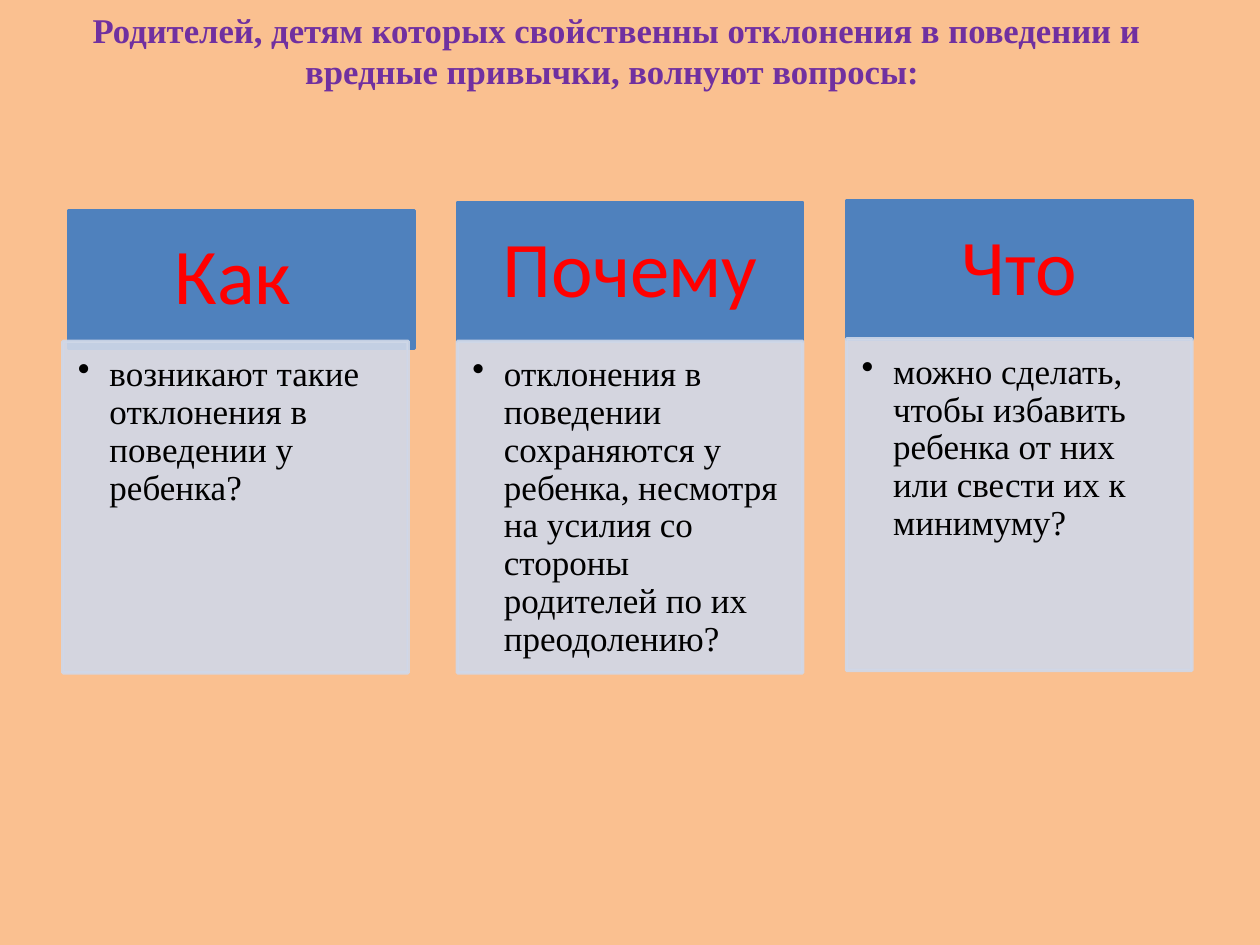
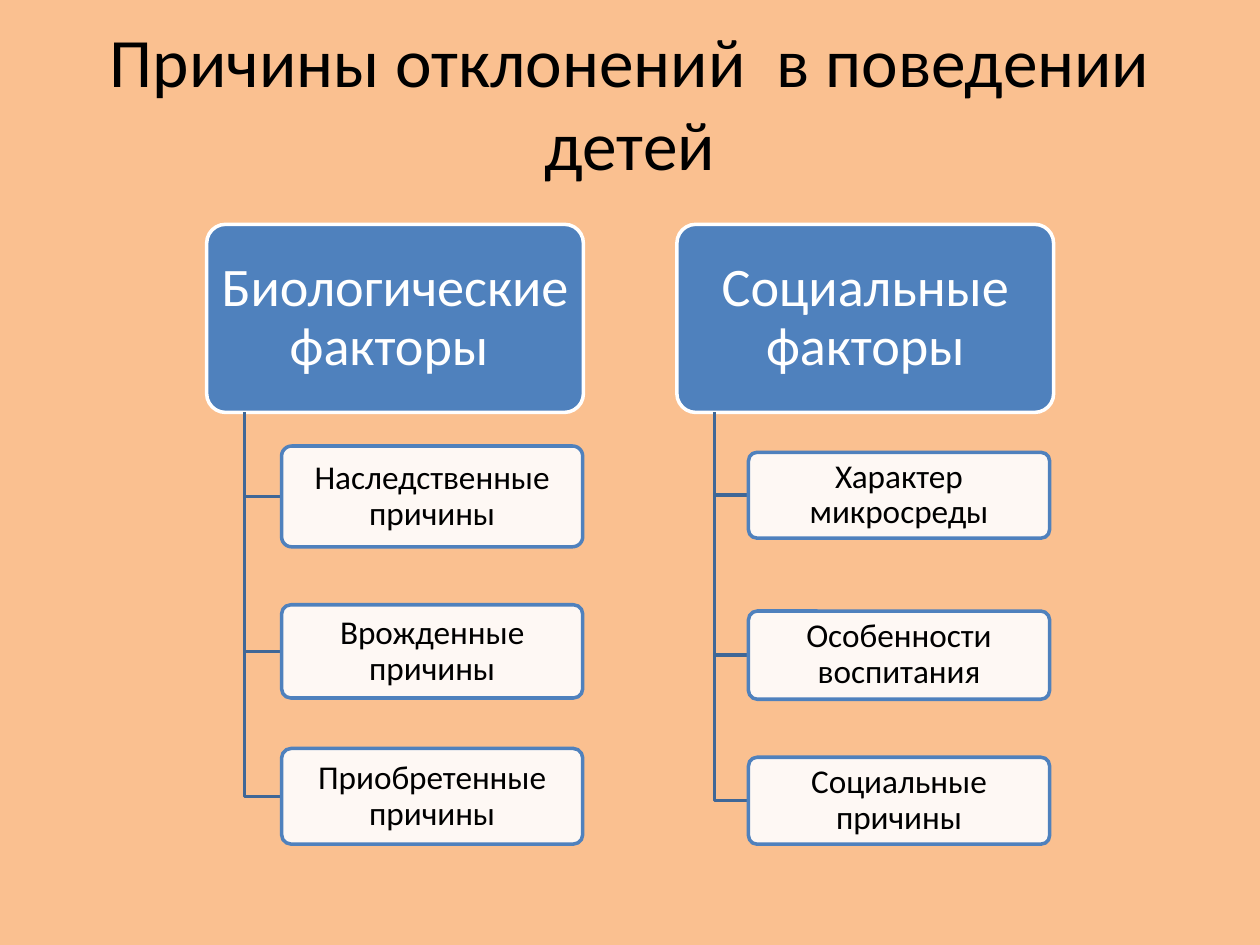
from dataclasses import dataclass

from lxml import etree
from pptx import Presentation
from pptx.dml.color import RGBColor
from pptx.enum.shapes import MSO_SHAPE
from pptx.enum.text import MSO_ANCHOR, MSO_AUTO_SIZE, PP_ALIGN
from pptx.oxml.ns import qn
from pptx.shapes.autoshape import Shape
from pptx.slide import Slide
from pptx.util import Pt

RECTANGLE = MSO_SHAPE.RECTANGLE
ROUNDED = MSO_SHAPE.ROUNDED_RECTANGLE
MIDDLE, TOP = MSO_ANCHOR.MIDDLE, MSO_ANCHOR.TOP
CENTER, LEFT = PP_ALIGN.CENTER, PP_ALIGN.LEFT
NO_AUTOFIT = MSO_AUTO_SIZE.NONE
TITLE_ONLY_LAYOUT = 5

COLORS = {
    "background": "FAC090",
    "blue": "4F81BD",
    "pale": "D0D8E8",
    "branch": "3F6797",
    "white": "FFFFFF",
    "black": "000000",
    "red": "FF0000",
    "purple": "7030A0",
}
SANS, SERIF = "Calibri", "Times New Roman"
LINE_WIDTH = 2
TRANSLUCENT = 90

CARD_WIDTH, CARD_HEAD_HEIGHT, CARD_BODY_HEIGHT = 197.3, 79, 189.4
FACTOR_TOP, FACTOR_WIDTH, FACTOR_HEIGHT = 128.2, 215.3, 107.5
CAUSE_WIDTH = 172.1
TRUNK_OFFSET = 21.6


@dataclass(frozen=True)
class Box:
    left: float
    top: float
    width: float
    height: float


@dataclass(frozen=True)
class TextStyle:
    size: float
    color: str
    font: str = SANS
    bold: bool = False
    align: PP_ALIGN = CENTER
    anchor: MSO_ANCHOR = MIDDLE
    insets: tuple[float, float, float, float] = (1, 1, 1, 1)
    line_spacing: float = 0.9
    bullet_indent: float = 0


@dataclass(frozen=True)
class BoxStyle:
    preset: MSO_SHAPE
    fill: str
    line: str
    text: TextStyle
    opacity: int = 100
    line_opacity: int = 100


@dataclass(frozen=True)
class Card:
    question: str
    detail: str
    head_left: float
    head_top: float
    body_left: float
    body_top: float


@dataclass(frozen=True)
class Cause:
    name: str
    top: float
    height: float


@dataclass(frozen=True)
class Factor:
    name: str
    left: float
    cause_left: float
    causes: tuple[Cause, ...]


QUESTION_TITLE = TextStyle(19.8, "purple", SERIF, True,
                           insets=(7.2, 3.6, 7.2, 48), line_spacing=1)
CAUSES_TITLE = TextStyle(39.6, "black", insets=(7.2, 3.6, 7.2, 3.6), line_spacing=1)
CARD_HEAD = BoxStyle(RECTANGLE, "blue", "blue",
                     TextStyle(45, "red", insets=(25, 14.4, 25, 14.4)))
CARD_BODY = BoxStyle(RECTANGLE, "pale", "pale",
                     TextStyle(20, "black", SERIF, align=LEFT, anchor=TOP,
                               insets=(8.6, 8.6, 11.5, 12.2), bullet_indent=18),
                     TRANSLUCENT, TRANSLUCENT)
FACTOR_BOX = BoxStyle(ROUNDED, "blue", "white", TextStyle(31, "white"))
CAUSE_BOX = BoxStyle(ROUNDED, "white", "blue", TextStyle(19, "black"), TRANSLUCENT)

CARDS = (
    Card("Как ", "возникают такие отклонения в поведении у ребенка?",
         39.6, 120.2, 36, 195.1),
    Card("Почему", "отклонения в поведении сохраняются у ребенка, несмотря на "
         "усилия со стороны родителей по их преодолению?",
         261.4, 115.9, 261.4, 195.1),
    Card("Что", "можно сделать, чтобы избавить ребенка от них или свести их к минимуму?",
         483.8, 114.9, 483.8, 193.7),
)
FACTORS = (
    Factor("Биологические факторы ", 118.1, 160.9, (
        Cause("Наследственные причины", 254.9, 57.6),
        Cause("Врожденные причины", 345.6, 53.3),
        Cause("Приобретенные причины", 427.7, 54.7),
    )),
    Factor("Социальные факторы", 386.8, 427.7, (
        Cause("Характер микросреды", 258.5, 49),
        Cause("Особенности воспитания", 349.2, 50.4),
        Cause("Социальные причины", 432.7, 49.7),
    )),
)


def rgb(name: str) -> RGBColor:
    return RGBColor.from_string(COLORS[name])


def write_text(shape: Shape, text: str, style: TextStyle) -> None:
    frame = shape.text_frame
    frame.text = text
    frame.word_wrap = True
    frame.auto_size = NO_AUTOFIT
    frame.vertical_anchor = style.anchor
    (frame.margin_left, frame.margin_top,
     frame.margin_right, frame.margin_bottom) = map(Pt, style.insets)
    paragraph = frame.paragraphs[0]
    paragraph.alignment = style.align
    paragraph.line_spacing = style.line_spacing
    paragraph.font.name = style.font
    paragraph.font.size = Pt(style.size)
    paragraph.font.bold = style.bold
    paragraph.font.color.rgb = rgb(style.color)
    if style.bullet_indent:
        properties = paragraph._p.get_or_add_pPr()
        properties.set("marL", str(Pt(style.bullet_indent)))
        properties.set("indent", str(-Pt(style.bullet_indent)))
        bullet = etree.Element(qn("a:buChar"), char="•")
        properties.find(qn("a:defRPr")).addprevious(bullet)


def set_opacity(fill_parent: etree._Element, percent: int) -> None:
    if percent < 100:
        color = fill_parent.find(qn("a:solidFill")).find(qn("a:srgbClr"))
        etree.SubElement(color, qn("a:alpha"), val=str(percent * 1000))


def set_line(shape: Shape, color: str) -> None:
    shape.shadow.inherit = False
    shape.line.color.rgb = rgb(color)
    shape.line.width = Pt(LINE_WIDTH)


def add_box(slide: Slide, box: Box, text: str, style: BoxStyle) -> None:
    shape = slide.shapes.add_shape(style.preset, Pt(box.left), Pt(box.top),
                                   Pt(box.width), Pt(box.height))
    if style.preset == ROUNDED:
        shape.adjustments[0] = 0.1
    shape.fill.solid()
    shape.fill.fore_color.rgb = rgb(style.fill)
    set_line(shape, style.line)
    properties = shape._element.spPr
    set_opacity(properties, style.opacity)
    set_opacity(properties.find(qn("a:ln")), style.line_opacity)
    write_text(shape, text, style.text)


def add_branch(slide: Slide, trunk: float, top: float, right: float, bottom: float) -> None:
    builder = slide.shapes.build_freeform(Pt(trunk), Pt(top))
    builder.add_line_segments([(Pt(trunk), Pt(bottom)), (Pt(right), Pt(bottom))], close=False)
    branch = builder.convert_to_shape()
    branch.fill.background()
    set_line(branch, "branch")


def add_card(slide: Slide, card: Card) -> None:
    add_box(slide, Box(card.head_left, card.head_top, CARD_WIDTH, CARD_HEAD_HEIGHT),
            card.question, CARD_HEAD)
    add_box(slide, Box(card.body_left, card.body_top, CARD_WIDTH, CARD_BODY_HEIGHT),
            card.detail, CARD_BODY)


def add_factor(slide: Slide, factor: Factor) -> None:
    add_box(slide, Box(factor.left, FACTOR_TOP, FACTOR_WIDTH, FACTOR_HEIGHT),
            factor.name, FACTOR_BOX)
    for cause in factor.causes:
        add_branch(slide, factor.left + TRUNK_OFFSET, FACTOR_TOP + FACTOR_HEIGHT,
                   factor.cause_left, cause.top + cause.height / 2)
        add_box(slide, Box(factor.cause_left, cause.top, CAUSE_WIDTH, cause.height),
                cause.name, CAUSE_BOX)


def add_titled_slide(presentation: Presentation, text: str, box: Box, style: TextStyle) -> Slide:
    slide = presentation.slides.add_slide(presentation.slide_layouts[TITLE_ONLY_LAYOUT])
    title = slide.shapes.title
    title.left, title.top = Pt(box.left), Pt(box.top)
    title.width, title.height = Pt(box.width), Pt(box.height)
    write_text(title, text, style)
    return slide


def main() -> None:
    presentation = Presentation()
    presentation.slide_width, presentation.slide_height = Pt(720), Pt(540)
    background = presentation.slide_master.background.fill
    background.solid()
    background.fore_color.rgb = rgb("background")

    questions = add_titled_slide(
        presentation,
        "Родителей, детям которых свойственны отклонения в поведении и "
        "вредные привычки, волнуют вопросы: ",
        Box(28.1, 0, 648, 101.5), QUESTION_TITLE)
    for card in CARDS:
        add_card(questions, card)

    causes = add_titled_slide(presentation, "Причины отклонений  в поведении детей",
                              Box(36, 21.6, 648, 72.7), CAUSES_TITLE)
    for factor in FACTORS:
        add_factor(causes, factor)

    presentation.save("out.pptx")


if __name__ == "__main__":
    main()
